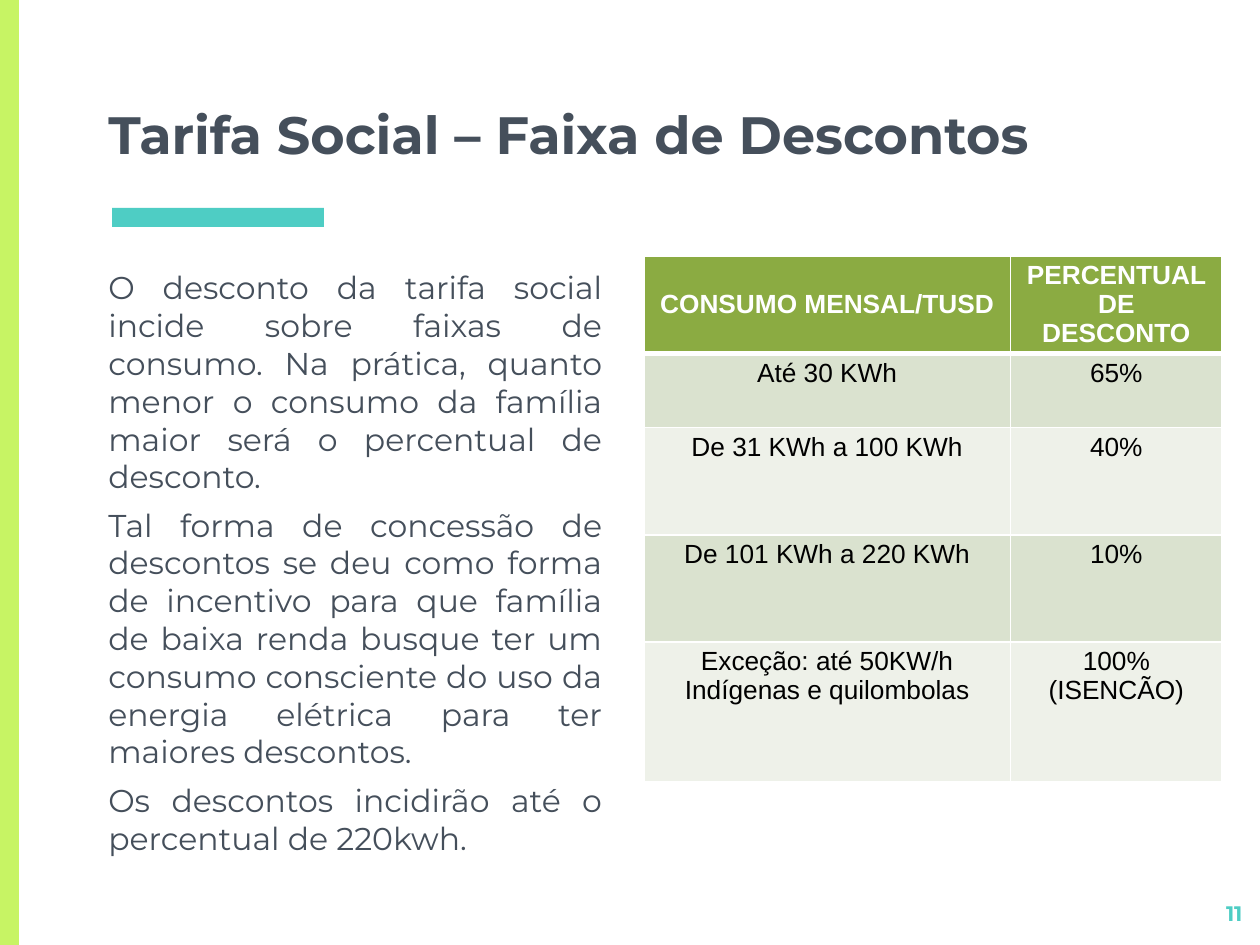
import pptx
import pptx.util
import pptx.dml.color
import pptx.enum.shapes
import pptx.enum.text
import pptx.oxml
import pptx.oxml.ns

Inches = pptx.util.Inches
Pt = pptx.util.Pt
RGBColor = pptx.dml.color.RGBColor
ALIGN = pptx.enum.text.PP_ALIGN
ANCHOR = pptx.enum.text.MSO_ANCHOR

SLATE = RGBColor(0x45, 0x4F, 0x5B)
TEAL = RGBColor(0x4E, 0xCD, 0xC4)
LIME = RGBColor(0xC7, 0xF4, 0x64)
HEADER_GREEN = RGBColor(0x8B, 0xAB, 0x42)
BAND_DARK = RGBColor(0xDA, 0xE2, 0xCF)
BAND_LIGHT = RGBColor(0xEE, 0xF1, 0xE9)
WHITE = RGBColor(0xFF, 0xFF, 0xFF)
BLACK = RGBColor(0, 0, 0)

TITLE = "Tarifa Social – Faixa de Descontos"
EXPLANATION = [
    "O desconto da tarifa social incide sobre faixas de consumo. Na prática, "
    "quanto menor o consumo da família maior será o percentual de desconto.",
    "Tal forma de concessão de descontos se deu como forma de incentivo para que "
    "família de baixa renda busque ter um consumo consciente do uso da energia "
    "elétrica para ter maiores descontos.",
    "Os descontos incidirão até o percentual de 220kwh.",
]
DISCOUNTS = [
    (["CONSUMO MENSAL/TUSD"], ["PERCENTUAL DE DESCONTO"]),
    (["Até 30 KWh"], ["65%"]),
    (["De 31 KWh a 100 KWh"], ["40%"]),
    (["De 101 KWh a 220 KWh"], ["10%"]),
    (["Exceção: até 50KW/h", "Indígenas e quilombolas"], ["100%", "(ISENCÃO)"]),
]
COLUMN_WIDTHS = [2.91, 1.68]
ROW_HEIGHTS = [0.68, 0.59, 0.85, 0.85, 1.11]


def write_text(frame, paragraphs, size, color, font="Montserrat", bold=False,
               align=ALIGN.LEFT, before=0):
    for index, text in enumerate(paragraphs):
        paragraph = frame.add_paragraph() if index else frame.paragraphs[0]
        paragraph.alignment = align
        paragraph.space_before = Pt(before)
        run = paragraph.add_run()
        run.text = text
        run.font.name = font
        run.font.size = Pt(size)
        run.font.bold = bold
        run.font.color.rgb = color


def place(shape, left, top, width, height, anchor=ANCHOR.TOP):
    shape.left, shape.top = Inches(left), Inches(top)
    shape.width, shape.height = Inches(width), Inches(height)
    frame = shape.text_frame
    frame.margin_left = frame.margin_right = Inches(0.1)
    frame.margin_top = frame.margin_bottom = Inches(0.1)
    frame.word_wrap = True
    frame.auto_size = pptx.enum.text.MSO_AUTO_SIZE.NONE
    frame.vertical_anchor = anchor
    return frame


def remove_bullets(frame):
    for paragraph in frame.paragraphs:
        properties = paragraph._p.get_or_add_pPr()
        properties.set("marL", "0")
        properties.set("indent", "0")
        pptx.oxml.ns.qn("a:buNone")
        properties.append(pptx.oxml.parse_xml(
            f'<a:buNone {pptx.oxml.ns.nsdecls("a")}/>'))


def add_bar(slide, left, top, width, height, color):
    bar = slide.shapes.add_shape(
        pptx.enum.shapes.MSO_SHAPE.RECTANGLE,
        Inches(left), Inches(top), Inches(width), Inches(height))
    bar.shadow.inherit = False
    bar.fill.solid()
    bar.fill.fore_color.rgb = color
    bar.line.fill.background()


def set_borders(cell, top, bottom):
    properties = cell._tc.get_or_add_tcPr()
    for side, width in (("L", 1), ("R", 1), ("T", top), ("B", bottom)):
        properties.append(pptx.oxml.parse_xml(
            f'<a:ln{side} {pptx.oxml.ns.nsdecls("a")} w="{Pt(width)}">'
            f'<a:solidFill><a:srgbClr val="{WHITE}"/></a:solidFill></a:ln{side}>'))


def format_cell(cell, paragraphs, row):
    header = row == 0
    set_borders(cell, top=3 if row == 1 else 1, bottom=3 if header else 1)
    cell.fill.solid()
    band = BAND_DARK if row % 2 else BAND_LIGHT
    cell.fill.fore_color.rgb = HEADER_GREEN if header else band
    cell.margin_left = cell.margin_right = Inches(0.08)
    cell.margin_top = cell.margin_bottom = Inches(0.04)
    cell.vertical_anchor = ANCHOR.MIDDLE if header else ANCHOR.TOP
    write_text(cell.text_frame, paragraphs, 15, WHITE if header else BLACK,
               font="Arial", bold=header, align=ALIGN.CENTER)


def add_discount_table(slide):
    table = slide.shapes.add_table(
        len(DISCOUNTS), len(COLUMN_WIDTHS), Inches(5.11), Inches(2.03),
        Inches(sum(COLUMN_WIDTHS)), Inches(sum(ROW_HEIGHTS))).table
    for column, width in zip(table.columns, COLUMN_WIDTHS):
        column.width = Inches(width)
    for row, (height, entries) in enumerate(zip(ROW_HEIGHTS, DISCOUNTS)):
        table.rows[row].height = Inches(height)
        for column, paragraphs in enumerate(entries):
            format_cell(table.cell(row, column), paragraphs, row)


def main():
    presentation = pptx.Presentation()
    presentation.slide_width = Inches(10)
    presentation.slide_height = Inches(7.5)
    slide = presentation.slides.add_slide(presentation.slide_layouts[1])

    add_bar(slide, 0.89, 1.65, 1.68, 0.15, TEAL)
    add_bar(slide, 0, 0, 0.15, 7.5, LIME)

    title = place(slide.shapes.title, 0.76, 0.69, 8.49, 0.72, ANCHOR.BOTTOM)
    write_text(title, [TITLE], 30, SLATE, bold=True)

    explanation = place(slide.placeholders[1], 0.76, 2.03, 4.12, 5.15)
    write_text(explanation, EXPLANATION, 18, SLATE, align=ALIGN.JUSTIFY, before=6)
    remove_bullets(explanation)

    page_number = place(slide.shapes.add_textbox(0, 0, 0, 0), 9.36, 7.05, 0.6, 0.45)
    write_text(page_number, ["11"], 12, TEAL, bold=True, align=ALIGN.RIGHT)

    add_discount_table(slide)
    presentation.save("out.pptx")


if __name__ == "__main__":
    main()
